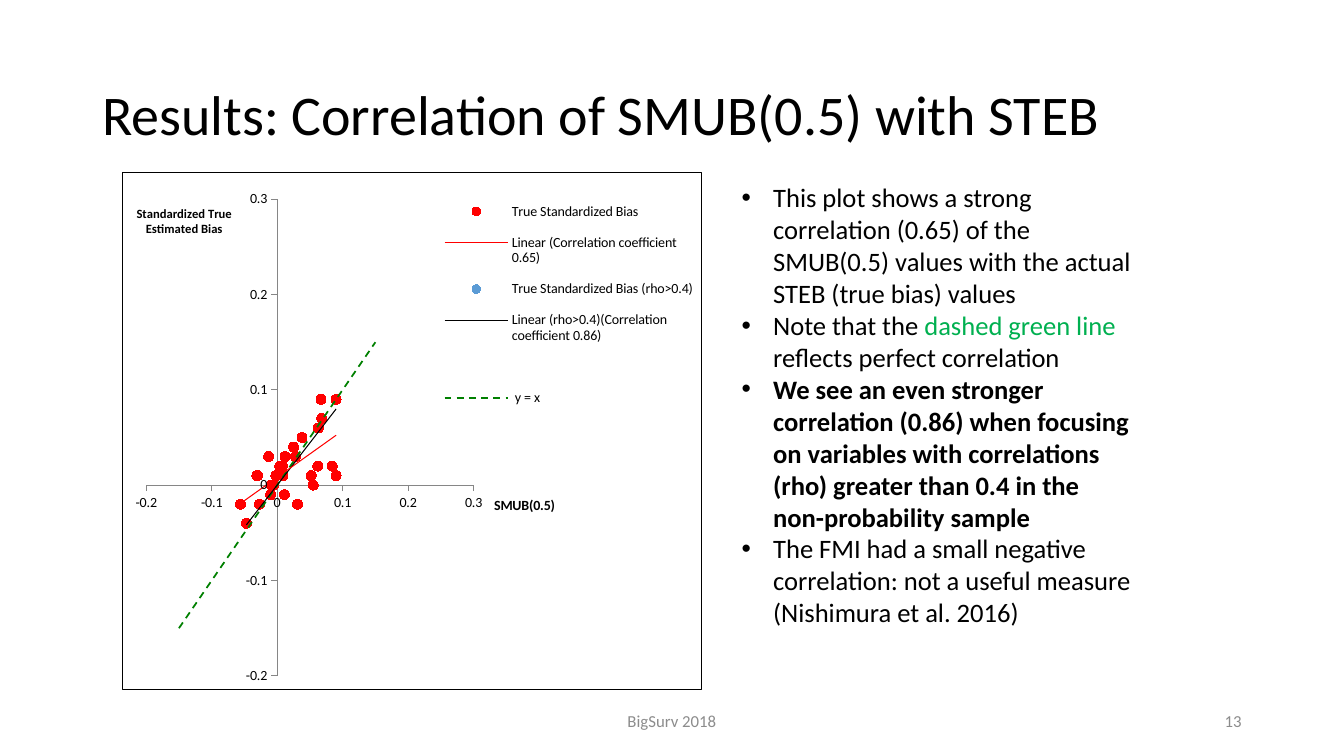
import pptx
import pptx.chart.data
import pptx.dml.color
import pptx.enum.chart
import pptx.enum.text
import pptx.oxml
import pptx.oxml.ns
import pptx.util

Pt = pptx.util.Pt
RGB = pptx.dml.color.RGBColor
ALIGN = pptx.enum.text.PP_ALIGN
ANCHOR = pptx.enum.text.MSO_ANCHOR
XL = pptx.enum.chart
qn = pptx.oxml.ns.qn

BLACK = RGB(0, 0, 0)
GRAY = RGB(0x8C, 0x8C, 0x8C)
AXIS_GRAY = RGB(0x86, 0x86, 0x86)
GREEN = RGB(0, 0xB0, 0x50)
RED = RGB(0xFF, 0, 0)
BLUE = RGB(0x5B, 0x9B, 0xD5)
FONT = "Calibri"

LABELS = [
    ("Results: Correlation of SMUB(0.5) with STEB", (66, 28.8, 828, 104.4), 40, BLACK, ALIGN.LEFT),
    ("BigSurv 2018", (318, 500.4, 324, 28.8), 12, GRAY, ALIGN.CENTER),
    ("13", (678, 500.4, 216, 28.8), 12, GRAY, ALIGN.RIGHT),
]

BULLETS_BOX = (522.7, 126, 292.3, 351.4)
BULLETS = [
    [("This plot shows a strong correlation (0.65) of the SMUB(0.5) values with the actual "
      "STEB (true bias) values", {})],
    [("Note that the ", {}), ("dashed green line ", {"color": GREEN}),
     ("reflects perfect correlation", {})],
    [("We see an even stronger correlation (0.86) when focusing on variables with correlations "
      "(rho) greater than 0.4 in the non-probability sample", {"bold": True})],
    [("The FMI had a small negative correlation: not a useful measure (Nishimura et al. 2016)", {})],
]

STRONG = [(0.068, 0.07), (0.09, 0.09), (-0.047, -0.04), (-0.027, -0.02), (-0.005, 0), (0.055, 0),
          (0.025, 0.04), (0.031, -0.02), (0.067, 0.09), (0.004, 0.02), (-0.01, -0.01), (0.063, 0.06)]
WEAK = [(0.084, 0.02), (-0.056, -0.02), (0.062, 0.02), (0.052, 0.01), (0.09, 0.01), (0.028, 0.03),
        (0.038, 0.05), (-0.009, 0), (0.012, 0.03), (-0.002, 0.01), (-0.03, 0.01), (-0.013, 0.03),
        (0.008, 0.02), (-0.031, 0.01), (0.011, -0.01), (0.009, 0.01)]
DIAGONAL = [(v, v) for v in (0.1, -0.1, 0.15, -0.15)]

CHART_BOX = (87.1, 123.1, 414.7, 370.1)
SERIES = [
    ("True Standardized Bias", STRONG + WEAK, RED,
     ("Linear (Correlation coefficient 0.65)", RED, 0.75, "solid")),
    ("True Standardized Bias (rho>0.4)", STRONG, BLUE,
     ("Linear (rho>0.4)(Correlation coefficient 0.86)", BLACK, 0.75, "solid")),
    (" ", DIAGONAL, None, (" y = x", RGB(0, 0x80, 0), 1.25, "dash")),
]
PLOT_AREA = {"x": 0.041, "y": 0.051, "w": 0.565, "h": 0.922}
LEGEND_AREA = {"x": 0.555, "y": 0.03, "w": 0.43, "h": 0.45}
X_TITLE = ("SMUB(0.5)", 10, {"x": 0.637, "y": 0.62})
Y_TITLE = ("Standardized True\nEstimated Bias", 9, {"x": 0.019, "y": 0.056})
AXIS_SCALE = {"minimum_scale": -0.2, "maximum_scale": 0.3, "major_unit": 0.1,
              "has_major_gridlines": False, "has_minor_gridlines": False,
              "major_tick_mark": XL.XL_TICK_MARK.OUTSIDE,
              "minor_tick_mark": XL.XL_TICK_MARK.NONE,
              "tick_label_position": XL.XL_TICK_LABEL_POSITION.NEXT_TO_AXIS}
NS = pptx.oxml.ns.nsdecls("c", "a")


def set_attrs(obj, values):
    for name, value in values.items():
        setattr(obj, name, value)


def style_font(font, size, color=BLACK, bold=False):
    set_attrs(font, {"name": FONT, "size": Pt(size), "bold": bold})
    font.color.rgb = color


def add_box(s, box, anchor):
    tf = s.shapes.add_textbox(*map(Pt, box)).text_frame
    set_attrs(tf, {"word_wrap": True, "vertical_anchor": anchor})
    return tf


def line_xml(color, width, dash):
    return (f'<c:spPr {NS}><a:ln w="{Pt(width)}"><a:solidFill><a:srgbClr val="{color}"/></a:solidFill>'
            f'<a:prstDash val="{dash}"/></a:ln></c:spPr>')


def place(element, area, inner=False):
    for old in element.findall(qn("c:layout")):
        element.remove(old)
    target = '<c:layoutTarget val="inner"/>' if inner else ""
    modes = "".join(f'<c:{k}Mode val="edge"/>' for k in area if k in "xy")
    sizes = "".join(f'<c:{k} val="{v}"/>' for k, v in area.items())
    layout = pptx.oxml.parse_xml(
        f"<c:layout {NS}><c:manualLayout>{target}{modes}{sizes}</c:manualLayout></c:layout>")
    before = [e for e in element if e.tag in (qn("c:tx"), qn("c:legendPos"), qn("c:legendEntry"))]
    element.insert(len(before), layout)


def style_axis(axis, title):
    text, size, spot = title
    set_attrs(axis, AXIS_SCALE)
    axis.format.line.color.rgb = AXIS_GRAY
    set_attrs(axis.tick_labels, {"number_format": "General", "number_format_is_linked": False})
    style_font(axis.tick_labels.font, 10)
    tf = axis.axis_title.text_frame
    tf.text = text
    for p in tf.paragraphs:
        p.alignment = ALIGN.CENTER
        style_font(p.runs[0].font, size, bold=True)
    tf._txBody.find(qn("a:bodyPr")).set("rot", "0")
    place(axis.axis_title._element, spot)


def style_series(ser, color, trend):
    ser.format.line.fill.background()
    ser.marker.style = XL.XL_MARKER_STYLE.CIRCLE if color else XL.XL_MARKER_STYLE.NONE
    if color:
        ser.marker.size = 7
        markers = [(ser.marker, color)]
        if color != RED:
            for i in range(len(STRONG)):
                marker = ser.points[i].marker
                set_attrs(marker, {"style": XL.XL_MARKER_STYLE.CIRCLE, "size": 7})
                markers.append((marker, RED))
        for marker, fill in markers:
            marker.format.fill.solid()
            marker.format.fill.fore_color.rgb = fill
            marker.format.line.color.rgb = fill
    name, *line = trend
    ser._element.find(qn("c:xVal")).addprevious(pptx.oxml.parse_xml(
        f'<c:trendline {NS}><c:name>{name.replace(">", "&gt;")}</c:name>{line_xml(*line)}'
        '<c:trendlineType val="linear"/><c:dispRSqr val="0"/><c:dispEq val="0"/></c:trendline>'))


def add_plot(s):
    data = pptx.chart.data.XyChartData()
    for name, points, _, _ in SERIES:
        ser = data.add_series(name)
        for x, y in points:
            ser.add_data_point(x, y)
    chart = s.shapes.add_chart(XL.XL_CHART_TYPE.XY_SCATTER, *map(Pt, CHART_BOX), data).chart
    set_attrs(chart, {"has_title": False, "has_legend": True})
    style_font(chart.font, 10)
    chart.plots[0].vary_by_categories = False
    set_attrs(chart.legend, {"position": XL.XL_LEGEND_POSITION.CORNER, "include_in_layout": False})
    style_font(chart.legend.font, 10)
    style_axis(chart.category_axis, X_TITLE)
    style_axis(chart.value_axis, Y_TITLE)
    for ser, (_, _, color, trend) in zip(chart.plots[0].series, SERIES):
        ser.smooth = False
        style_series(ser, color, trend)
    root = chart._chartSpace
    place(root.find(".//" + qn("c:plotArea")), PLOT_AREA, inner=True)
    place(chart.legend._element, LEGEND_AREA)
    root.find(qn("c:txPr")).addprevious(pptx.oxml.parse_xml(line_xml(BLACK, 0.75, "solid")))


def add_bullets(s):
    tf = add_box(s, BULLETS_BOX, ANCHOR.TOP)
    for i, runs in enumerate(BULLETS):
        p = tf.paragraphs[0] if i == 0 else tf.add_paragraph()
        pPr = p._p.get_or_add_pPr()
        pPr.set("marL", str(Pt(22.5)))
        pPr.set("indent", str(-Pt(22.5)))
        for tag in ('buFont typeface="Arial"', 'buChar char="•"'):
            pPr.append(pptx.oxml.parse_xml(f"<a:{tag} {NS}/>"))
        for text, look in runs:
            r = p.add_run()
            r.text = text
            style_font(r.font, 19, **look)


def main():
    prs = pptx.Presentation()
    set_attrs(prs, {"slide_width": Pt(960), "slide_height": Pt(540)})
    s = prs.slides.add_slide(prs.slide_layouts[6])
    for text, box, size, color, align in LABELS:
        p = add_box(s, box, ANCHOR.MIDDLE).paragraphs[0]
        p.alignment = align
        r = p.add_run()
        r.text = text
        style_font(r.font, size, color)
    add_plot(s)
    add_bullets(s)
    prs.save("out.pptx")


if __name__ == "__main__":
    main()
